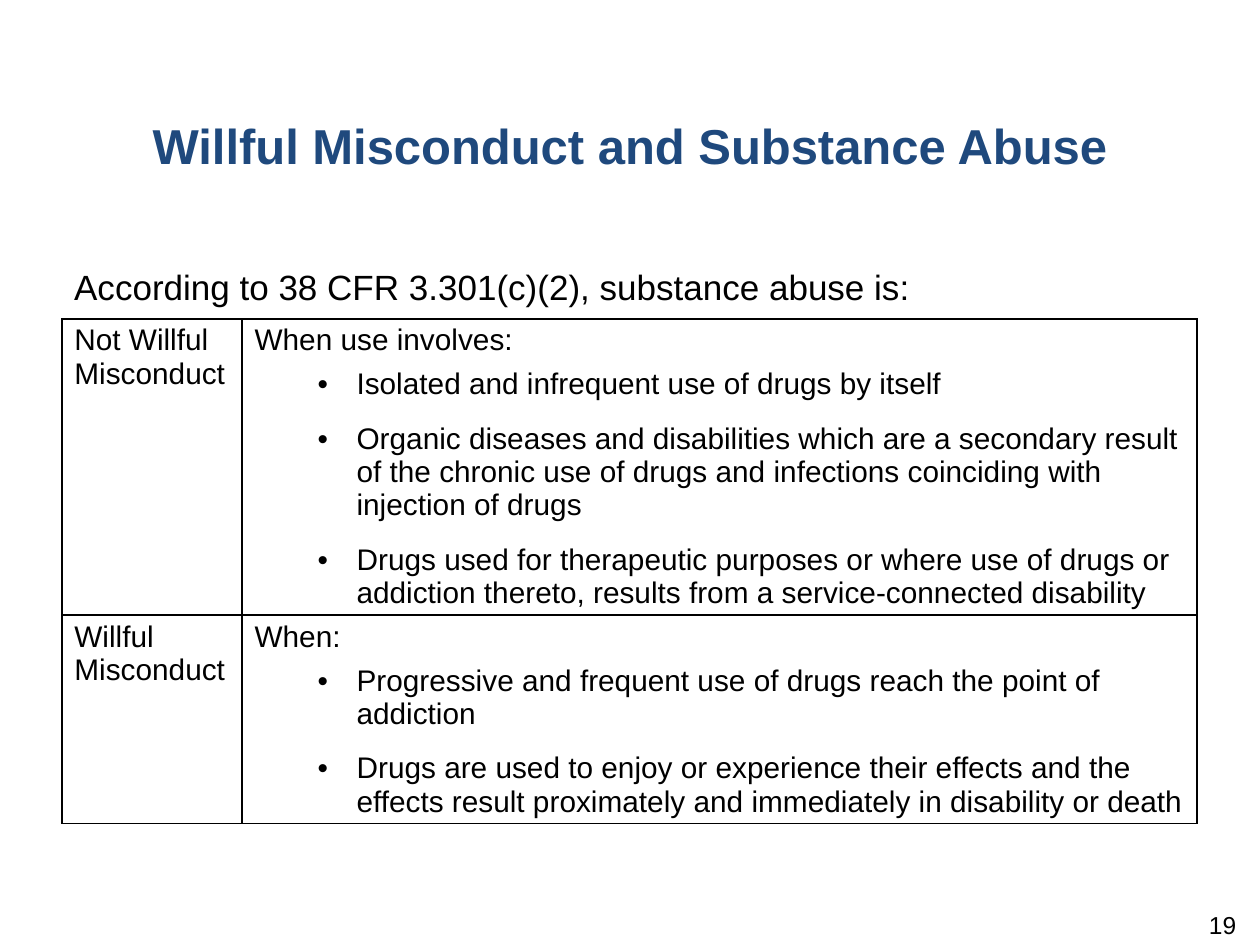
from lxml.etree import SubElement
from pptx import Presentation
from pptx.dml.color import RGBColor
from pptx.enum.text import MSO_ANCHOR as Anchor, PP_ALIGN as Align
from pptx.oxml.ns import qn
from pptx.util import Inches, Pt

TITLE = "Willful Misconduct and Substance Abuse"
INTRO = "According to 38 CFR 3.301(c)(2), substance abuse is:"
PAGE = "19"
ROWS = [
    ("Not Willful Misconduct", "When use involves:", [
        "Isolated and infrequent use of drugs by itself",
        "Organic diseases and disabilities which are a secondary result of "
        "the chronic use of drugs and infections coinciding with injection "
        "of drugs",
        "Drugs used for therapeutic purposes or where use of drugs or "
        "addiction thereto, results from a service-connected disability",
    ]),
    ("Willful Misconduct", "When:", [
        "Progressive and frequent use of drugs reach the point of addiction",
        "Drugs are used to enjoy or experience their effects and the effects "
        "result proximately and immediately in disability or death",
    ]),
]
WIDTHS = [1.43, 7.58]
HEIGHTS = [2.16, 1.42]
BLACK, WHITE, NAVY = "000000", "FFFFFF", "1F497D"


def color(code):
    return RGBColor.from_string(code)


def style(para, size, code=BLACK, bold=False):
    for run in para.runs:
        font = run.font
        font.name, font.size, font.bold = "Arial", Pt(size), bold
        font.color.rgb = color(code)


def write(shape, text, box, size, code=BLACK, bold=False, align=Align.LEFT):
    """Place a shape and fill it with one styled line."""
    shape.left, shape.top, shape.width, shape.height = map(Inches, box)
    frame = shape.text_frame
    frame.word_wrap = True
    frame.vertical_anchor = Anchor.TOP
    frame.text = text
    para = frame.paragraphs[0]
    para.alignment = align
    para.space_after = Pt(6)
    style(para, size, code, bold)
    return frame


def bullet(para):
    props = para._p.get_or_add_pPr()
    props.set("marL", str(Inches(0.81)))
    props.set("indent", str(Inches(-0.31)))
    SubElement(props, qn("a:buFont"), typeface="Arial")
    SubElement(props, qn("a:buChar"), char="•")
    para.level = 1
    para.space_before = para.space_after = Pt(6)


def frame_cell(cell):
    """Give a cell thin black borders, a white fill and its margins."""
    props = cell._tc.get_or_add_tcPr()
    for side in "LRTB":
        line = SubElement(props, qn(f"a:ln{side}"), w=str(Pt(1)))
        fill = SubElement(line, qn("a:solidFill"))
        SubElement(fill, qn("a:srgbClr"), val=BLACK)
    cell.fill.solid()
    cell.fill.fore_color.rgb = color(WHITE)
    cell.margin_left = cell.margin_right = Inches(0.1)
    cell.margin_top = cell.margin_bottom = Inches(0.04)


def fill_cell(cell, head, items=()):
    frame_cell(cell)
    frame = cell.text_frame
    frame.text = head
    for item in items:
        para = frame.add_paragraph()
        para.text = item
        bullet(para)
    for para in frame.paragraphs:
        style(para, 17)


def main():
    deck = Presentation()
    deck.slide_width, deck.slide_height = Inches(10), Inches(7.5)
    slide = deck.slides.add_slide(deck.slide_layouts[5])
    shapes = slide.shapes
    write(shapes.title, TITLE, (0, 0.87, 10, 1.19), 28, NAVY, True,
          Align.CENTER)

    table = shapes.add_table(len(ROWS), len(WIDTHS), Inches(0.49),
                             Inches(2.53), Inches(sum(WIDTHS)),
                             Inches(sum(HEIGHTS))).table
    for col, width in zip(table.columns, WIDTHS):
        col.width = Inches(width)
    for row, height, (kind, lead, items) in zip(table.rows, HEIGHTS, ROWS):
        row.height = Inches(height)
        fill_cell(row.cells[0], kind)
        fill_cell(row.cells[1], lead, items)

    write(shapes.add_textbox(0, 0, 0, 0), INTRO, (0.49, 2.06, 8.17, 0.44), 20)
    page = write(shapes.add_textbox(0, 0, 0, 0), PAGE,
                 (7.58, 7.22, 2.33, 0.4), 14, align=Align.RIGHT)
    page.margin_top = 0
    deck.save("out.pptx")


if __name__ == "__main__":
    main()
